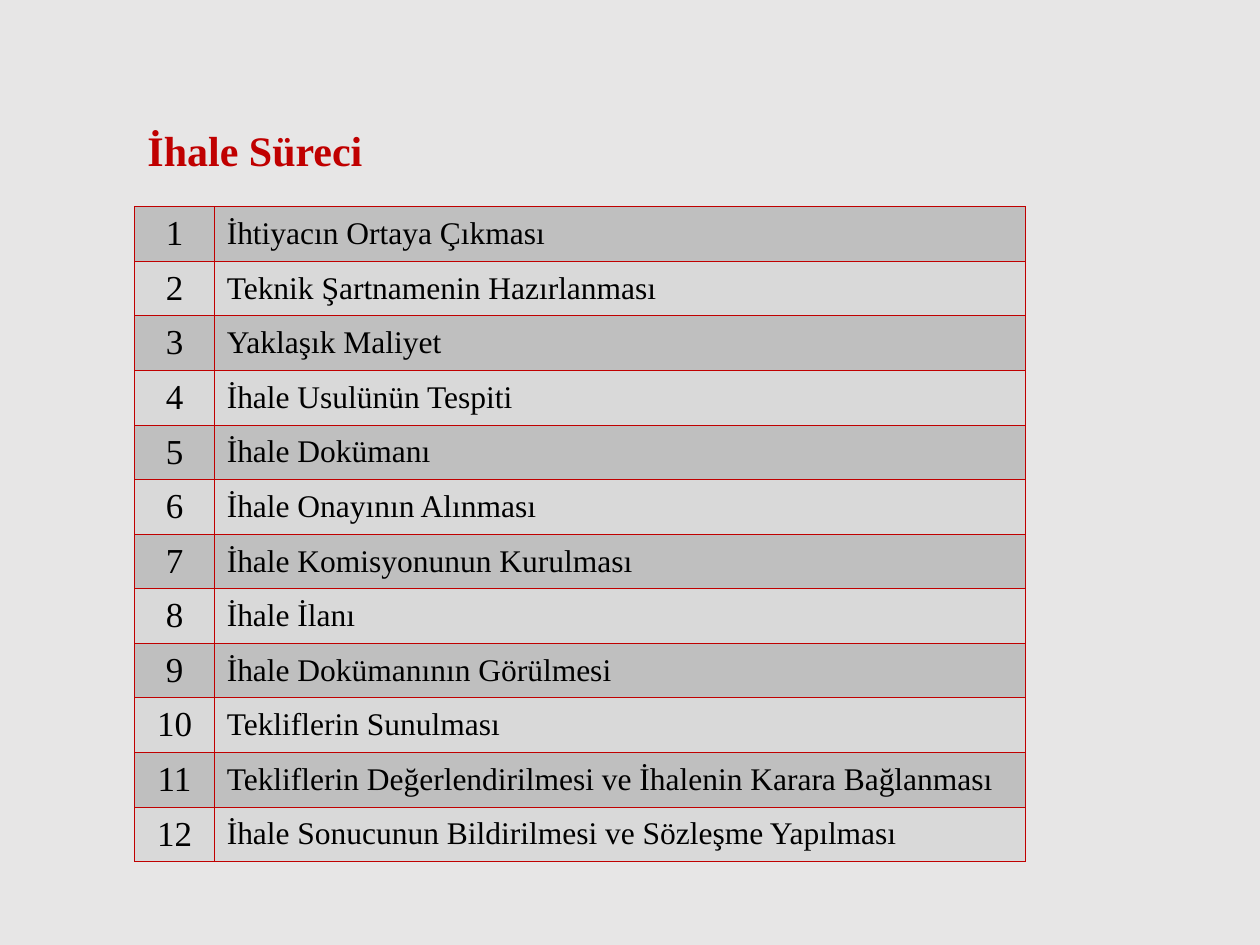
from pptx import Presentation
from pptx.dml.color import RGBColor
from pptx.enum import text
from pptx.oxml import parse_xml
from pptx.oxml.ns import nsdecls
from pptx.util import Inches, Pt

# Content
HEADING = "İhale Süreci"
STEPS = [
    "İhtiyacın Ortaya Çıkması",
    "Teknik Şartnamenin Hazırlanması",
    "Yaklaşık Maliyet",
    "İhale Usulünün Tespiti",
    "İhale Dokümanı",
    "İhale Onayının Alınması",
    "İhale Komisyonunun Kurulması",
    "İhale İlanı",
    "İhale Dokümanının Görülmesi",
    "Tekliflerin Sunulması",
    "Tekliflerin Değerlendirilmesi ve İhalenin Karara Bağlanması",
    "İhale Sonucunun Bildirilmesi ve Sözleşme Yapılması",
]
LEFT_ALIGNED = {5, 7, 8, 9, 11, 12}  # the other steps are justified

THEME = {
    "font": "Times New Roman",
    "background": "E7E6E6",
    "accent": "C00000",
    "ink": "000000",
    "bands": ("BFBFBF", "D9D9D9"),
    "heading_size": 24,
    "number_size": 20,
    "step_size": 18,
    "border": 0.5,
}
LEFT, TABLE_TOP, TABLE_HEIGHT = 1.07, 1.64, 5.2
COLUMNS = (0.63, 6.44)


def style(paragraph, size, color, align, bold=False):
    paragraph.alignment = align
    paragraph.space_before = Pt(0)
    paragraph.font.name = THEME["font"]
    paragraph.font.size = Pt(size)
    paragraph.font.bold = bold
    paragraph.font.color.rgb = RGBColor.from_string(color)


def add_borders(cell):
    properties = cell._tc.get_or_add_tcPr()
    for position, side in enumerate(("lnL", "lnR", "lnT", "lnB")):
        properties.insert(position, parse_xml(
            f'<a:{side} {nsdecls("a")} w="{Pt(THEME["border"])}"><a:solidFill>'
            f'<a:srgbClr val="{THEME["accent"]}"/></a:solidFill></a:{side}>'))


def fill_cell(cell, words, size, align, band):
    cell.text = words
    cell.vertical_anchor = text.MSO_ANCHOR.MIDDLE
    cell.fill.solid()
    cell.fill.fore_color.rgb = RGBColor.from_string(band)
    style(cell.text_frame.paragraphs[0], size, THEME["ink"], align)
    add_borders(cell)


def main():
    deck = Presentation()
    deck.slide_width, deck.slide_height = Inches(10), Inches(7.5)
    slide = deck.slides.add_slide(deck.slide_layouts[5])
    slide.background.fill.solid()
    slide.background.fill.fore_color.rgb = RGBColor.from_string(THEME["background"])

    # Heading
    heading = slide.shapes.title
    heading.left, heading.top = Inches(LEFT), Inches(0.98)
    heading.width, heading.height = Inches(9.05), Inches(0.47)
    heading.text_frame.text = HEADING
    heading.text_frame.vertical_anchor = text.MSO_ANCHOR.MIDDLE
    heading_line = heading.text_frame.paragraphs[0]
    heading_line.line_spacing = 0.9
    style(heading_line, THEME["heading_size"], THEME["accent"],
          text.PP_ALIGN.LEFT, bold=True)

    # Numbered steps
    process = slide.shapes.add_table(
        len(STEPS), len(COLUMNS), Inches(LEFT), Inches(TABLE_TOP),
        Inches(sum(COLUMNS)), Inches(TABLE_HEIGHT)).table
    process.first_row = process.horz_banding = False
    for column, width in zip(process.columns, COLUMNS):
        column.width = Inches(width)
    for number, step in enumerate(STEPS, start=1):
        band = THEME["bands"][(number - 1) % 2]
        align = (text.PP_ALIGN.LEFT if number in LEFT_ALIGNED
                 else text.PP_ALIGN.JUSTIFY)
        row = number - 1
        fill_cell(process.cell(row, 0), str(number), THEME["number_size"],
                  text.PP_ALIGN.CENTER, band)
        fill_cell(process.cell(row, 1), step, THEME["step_size"], align, band)

    deck.save("out.pptx")


if __name__ == "__main__":
    main()
